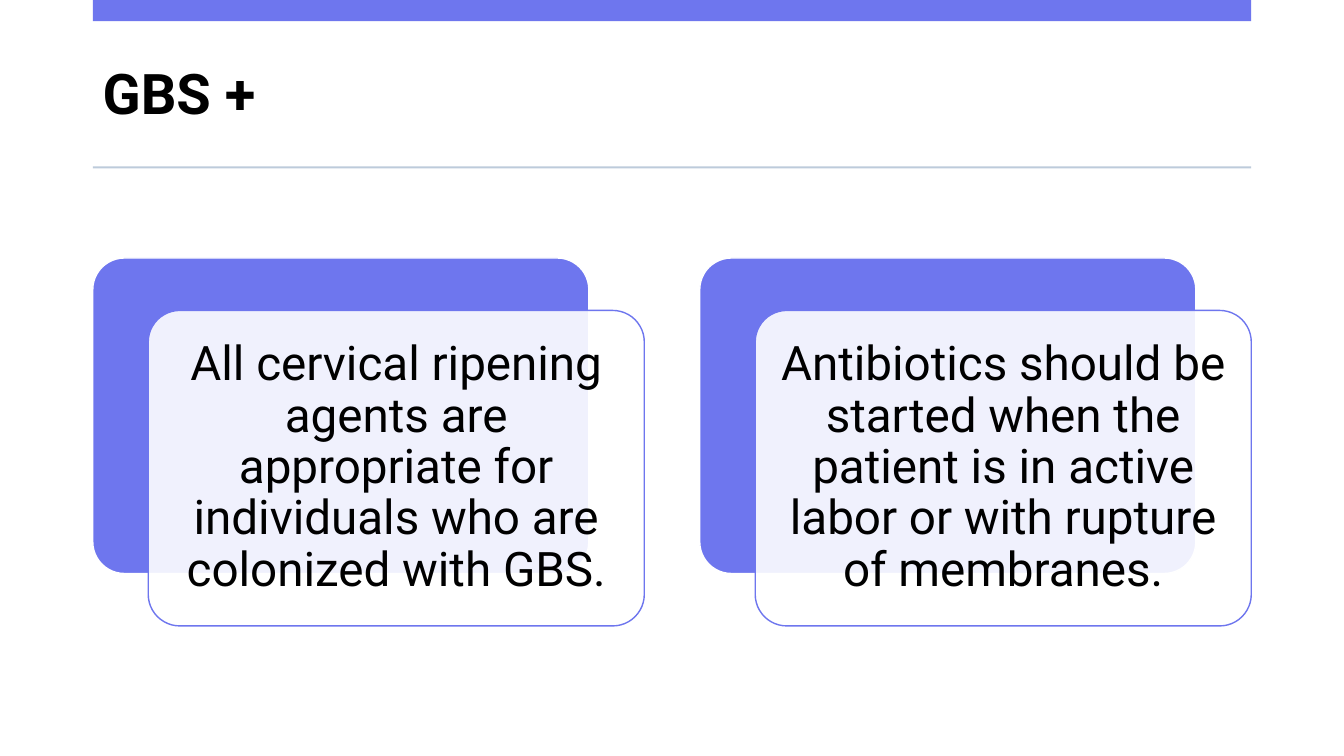
from dataclasses import dataclass

from pptx import Presentation
from pptx.dml.color import RGBColor
from pptx.enum.shapes import MSO_SHAPE as Preset
from pptx.enum.text import MSO_ANCHOR as Anchor, PP_ALIGN as Align
from pptx.oxml.ns import qn
from pptx.shapes.autoshape import Shape
from pptx.slide import Slide
from pptx.text.text import TextFrame
from pptx.util import Inches, Pt
from lxml import etree

COLORS = {
    "accent": "6E76EE",
    "rule": "BDCBDB",
    "white": "FFFFFF",
    "text": "000000",
}
FONT = "Roboto"
MARGIN, CONTENT_WIDTH = 0.92, 11.49
CARD_WIDTH, CARD_HEIGHT = 4.92, 3.13
CARD_TOP, CARD_PITCH = 2.56, 6.02
FRONT_DX, FRONT_DY = 0.55, 0.52


@dataclass(frozen=True)
class Box:
    left: float
    top: float
    width: float
    height: float

    def lengths(self) -> list[int]:
        return [Inches(v) for v in (self.left, self.top, self.width, self.height)]


GUIDANCE = [
    "All cervical ripening agents are appropriate for individuals who are colonized with GBS.",
    "Antibiotics should be started when the patient is in active labor or with rupture of membranes.",
]


def rgb(name: str) -> RGBColor:
    return RGBColor.from_string(COLORS[name])


def add_filled(slide: Slide, preset: Preset, box: Box, fill: str, line: str = "") -> Shape:
    shape = slide.shapes.add_shape(preset, *box.lengths())
    shape.shadow.inherit = False
    shape.fill.solid()
    shape.fill.fore_color.rgb = rgb(fill)
    if line:
        shape.line.color.rgb = rgb(line)
        shape.line.width = Pt(1)
    else:
        shape.line.fill.background()
    return shape


def write(frame: TextFrame, text: str, size: float, align: Align, bold: bool = False) -> None:
    frame.word_wrap = True
    frame.vertical_anchor = Anchor.MIDDLE
    frame.text = text
    paragraph = frame.paragraphs[0]
    paragraph.alignment = align
    paragraph.line_spacing = 0.9
    font = paragraph.runs[0].font
    font.name, font.size, font.bold = FONT, Pt(size), bold
    font.color.rgb = rgb("text")


def set_opacity(shape: Shape, percent: int) -> None:
    color = shape.fill._xPr.find(qn("a:solidFill"))[0]
    etree.SubElement(color, qn("a:alpha")).set("val", str(percent * 1000))


def add_card(slide: Slide, left: float, text: str) -> None:
    """Draw a solid back panel and an offset translucent panel holding the text."""
    back = add_filled(slide, Preset.ROUNDED_RECTANGLE,
                      Box(left, CARD_TOP, CARD_WIDTH, CARD_HEIGHT), "accent", "white")
    front = add_filled(slide, Preset.ROUNDED_RECTANGLE,
                       Box(left + FRONT_DX, CARD_TOP + FRONT_DY, CARD_WIDTH, CARD_HEIGHT),
                       "white", "accent")
    for panel in (back, front):
        panel.adjustments[0] = 0.1
    set_opacity(front, 90)
    frame = front.text_frame
    frame.margin_left = frame.margin_right = Inches(0.14)
    frame.margin_top = frame.margin_bottom = Inches(0.14)
    write(frame, text, 34, Align.CENTER)


def main() -> None:
    deck = Presentation()
    deck.slide_width, deck.slide_height = Inches(13.33), Inches(7.5)
    slide = deck.slides.add_slide(deck.slide_layouts[6])

    heading = slide.shapes.add_textbox(*Box(MARGIN, 0.37, CONTENT_WIDTH, 1.18).lengths())
    write(heading.text_frame, "GBS +", 40, Align.LEFT, bold=True)
    add_filled(slide, Preset.RECTANGLE, Box(MARGIN, 0, CONTENT_WIDTH, 0.21), "accent")
    add_filled(slide, Preset.RECTANGLE, Box(MARGIN, 1.65, CONTENT_WIDTH, 0.02), "rule")

    for index, text in enumerate(GUIDANCE):
        add_card(slide, MARGIN + index * CARD_PITCH, text)

    deck.save("out.pptx")


if __name__ == "__main__":
    main()
